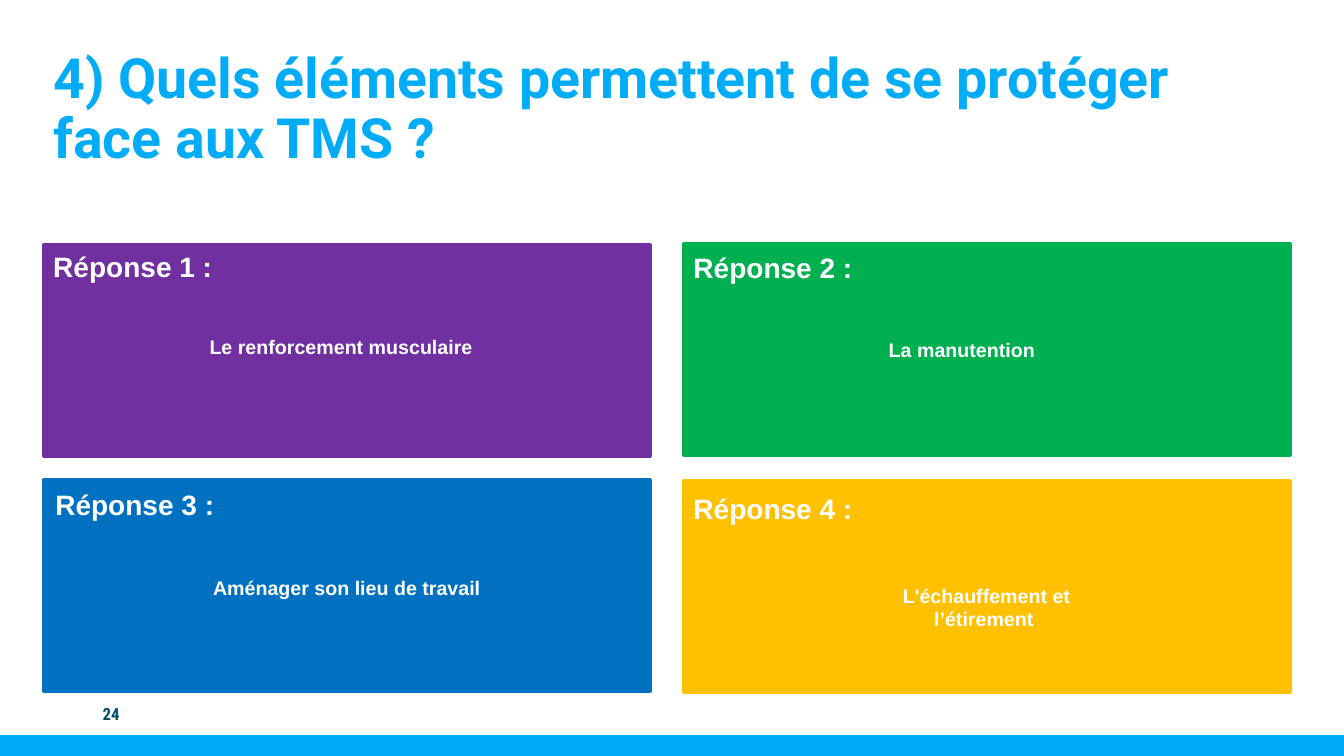
from lxml.etree import SubElement
from pptx import Presentation
from pptx.dml.color import RGBColor
from pptx.enum.shapes import MSO_CONNECTOR, MSO_SHAPE
from pptx.enum.text import MSO_ANCHOR, PP_ALIGN
from pptx.oxml.ns import qn
from pptx.util import Inches, Pt

COLORS = {"sky": "00ACF8", "navy": "004D6B", "white": "FFFFFF", "purple": "7030A0",
          "green": "00B050", "blue": "0070C0", "amber": "FFC000"}
TITLE = "4) Quels éléments permettent de se protéger face aux TMS ?"
PAGE = "24"
CARD_SIZE = (6.02, 2.1)
ANSWERS = [
    {"color": "purple", "card": (0.43, 2.43), "label": (0.43, 2.43, 3.1, 0.44),
     "text": "Le renforcement musculaire", "box": (1.98, 3.27, 2.97, 0.34), "align": PP_ALIGN.LEFT},
    {"color": "green", "card": (6.78, 2.42), "label": (6.78, 2.44, 2.57, 0.44),
     "text": "La manutention", "box": (8.49, 3.3, 2.1, 0.34), "align": PP_ALIGN.CENTER},
    {"color": "blue", "card": (0.43, 4.76), "label": (0.45, 4.79, 2.58, 0.44),
     "text": "Aménager son lieu de travail", "box": (1.1, 5.66, 4.68, 0.34), "align": PP_ALIGN.CENTER},
    {"color": "amber", "card": (6.78, 4.77), "label": (6.78, 4.83, 3.43, 0.44),
     "text": "L'échauffement et l’étirement ", "box": (8.59, 5.74, 2.39, 0.57), "align": PP_ALIGN.CENTER},
]


def rgb(name):
    return RGBColor.from_string(COLORS[name])


def add_text(s, text, box, size, color="white", font="Arial", align=PP_ALIGN.LEFT,
             anchor=MSO_ANCHOR.TOP, spacing=None):
    tf = s.shapes.add_textbox(*map(Inches, box)).text_frame
    tf.word_wrap = True
    tf.vertical_anchor = anchor
    tf.text = text
    p = tf.paragraphs[0]
    p.alignment = align
    p.line_spacing = spacing
    r = p.runs[0]
    r.font.name, r.font.size, r.font.bold = font, Pt(size), True
    r.font.color.rgb = rgb(color)


def add_card(s, color, corner):
    sp = s.shapes.add_shape(MSO_SHAPE.RECTANGLE, *map(Inches, corner + CARD_SIZE))
    sp.shadow.inherit = False
    sp.fill.solid()
    sp.fill.fore_color.rgb = rgb(color)
    sp.line.color.rgb = rgb(color)
    sp.line.width = Pt(2)


def add_footer_line(s):
    line = s.shapes.add_connector(MSO_CONNECTOR.STRAIGHT, *map(Inches, (0, 7.4, 13.33, 7.4)))
    line.line.color.rgb = rgb("sky")
    line.line.width = Pt(15)
    SubElement(line._element.spPr, qn("a:effectLst"))


def main():
    """Build the quiz slide with four answer cards."""
    prs = Presentation()
    prs.slide_width, prs.slide_height = Inches(13.33), Inches(7.5)
    s = prs.slides.add_slide(prs.slide_layouts[6])
    add_footer_line(s)
    add_text(s, TITLE, (0.43, 0.36, 11.5, 1.38), 39.6, "sky", "Roboto",
             anchor=MSO_ANCHOR.BOTTOM, spacing=0.9)
    add_text(s, PAGE, (0.92, 6.88, 0.65, 0.4), 12, "navy", "Roboto Condensed",
             anchor=MSO_ANCHOR.MIDDLE)
    for number, answer in enumerate(ANSWERS, 1):
        add_card(s, answer["color"], answer["card"])
        add_text(s, f"Réponse {number} :", answer["label"], 20)
        add_text(s, answer["text"], answer["box"], 14, align=answer["align"])
    prs.save("out.pptx")


if __name__ == "__main__":
    main()
